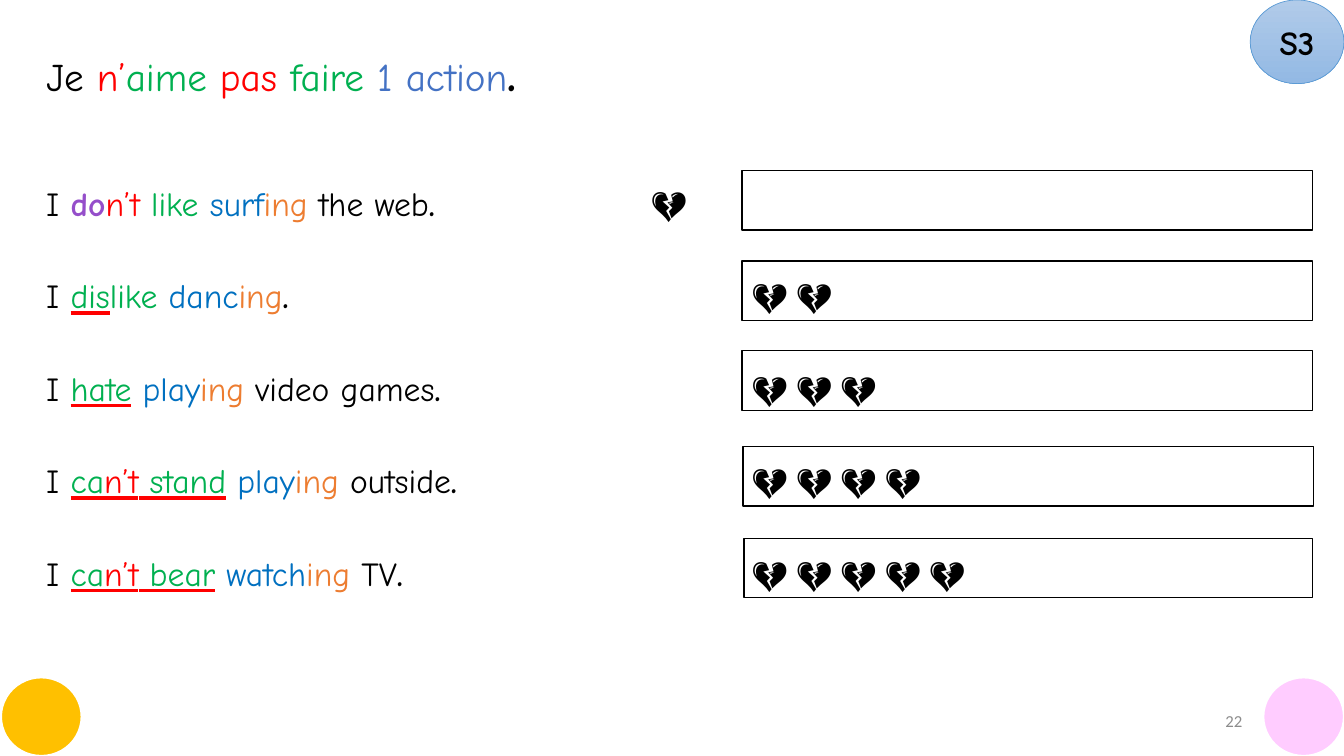
"""Build a slide on the ways to say in English that you do not like an action."""
from lxml.etree import SubElement
from pptx import Presentation
from pptx.dml.color import RGBColor
from pptx.enum.shapes import MSO_SHAPE as Shape
from pptx.enum.text import MSO_ANCHOR as Anchor, MSO_UNDERLINE as Underline, PP_ALIGN as Align
from pptx.oxml.ns import qn
from pptx.util import Inches, Pt

BLACK = RGBColor(0x00, 0x00, 0x00)
WHITE = RGBColor(0xFF, 0xFF, 0xFF)
RED = RGBColor(0xFF, 0x00, 0x00)
GREEN = RGBColor(0x00, 0xB0, 0x50)
BLUE = RGBColor(0x00, 0x70, 0xC0)
ORANGE = RGBColor(0xED, 0x7D, 0x31)
PURPLE = RGBColor(0x95, 0x4E, 0xCA)
INDIGO = RGBColor(0x44, 0x72, 0xC4)
GREY = RGBColor(0x8C, 0x8C, 0x8C)
GOLD = RGBColor(0xFF, 0xC0, 0x00)
PINK = RGBColor(0xFF, 0xCC, 0xFF)
BADGE_TOP = RGBColor(0xB1, 0xCB, 0xE9)
BADGE_BOTTOM = RGBColor(0x93, 0xB9, 0xE4)
BADGE_LINE = RGBColor(0x5B, 0x9B, 0xD5)

FONT = "Comic Neue"
HEART = "💔"
HEART_TABS = [6, 7, 7, 7, 7]

TITLE = [("Je ", BLACK), ("n’", RED), ("aime ", GREEN), ("pas ", RED),
         ("faire ", GREEN), ("1 action", INDIGO)]
SENTENCES = [
    [("I ", BLACK), ("do", PURPLE, "bold"), ("n’t ", RED), ("like ", GREEN),
     ("surf", BLUE), ("ing", ORANGE), (" the web", BLACK)],
    [("I ", BLACK), ("dis", GREEN, "underline"), ("like ", GREEN),
     ("danc", BLUE), ("ing", ORANGE)],
    [("I ", BLACK), ("hate", GREEN, "underline"), (" play", BLUE),
     ("ing ", ORANGE), ("video games", BLACK)],
    [("I ", BLACK), ("ca", GREEN, "underline"), ("n’t", RED, "underline"),
     (" stand", GREEN, "underline"), (" play", BLUE), ("ing ", ORANGE),
     ("outside", BLACK)],
    [("I ", BLACK), ("ca", GREEN, "underline"), ("n’t", RED, "underline"),
     (" bear", GREEN, "underline"), (" watch", BLUE), ("ing", ORANGE),
     (" TV", BLACK)],
]
ANSWER_BOXES = [(7.36, 1.69, 5.66), (7.36, 2.59, 5.66), (7.36, 3.48, 5.66),
                (7.37, 4.43, 5.66), (7.38, 5.34, 5.64)]


def add_span(para, text, color, style="", size=24, font=FONT):
    """Add one formatted run, with a thick red underline if asked."""
    span = para.add_run()
    span.text = text
    span.font.size = Pt(size)
    span.font.bold = style == "bold"
    span.font.color.rgb = color
    if style == "underline":
        span.font.underline = Underline.HEAVY_LINE
        line_fill = SubElement(span.font._element, qn("a:uFill"))
        solid = SubElement(line_fill, qn("a:solidFill"))
        SubElement(solid, qn("a:srgbClr"), val=str(RED))
    span.font.name = font


def add_title(page):
    """Place and write the French model sentence."""
    title = page.shapes.title
    title.left, title.top = Inches(0.36), Inches(0.48)
    title.width, title.height = Inches(5.48), Inches(0.94)
    frame = title.text_frame
    frame.vertical_anchor = Anchor.TOP
    frame.margin_top = 0
    para = frame.paragraphs[0]
    para.alignment = Align.LEFT
    para.line_spacing = 0.9
    for text, color in TITLE:
        add_span(para, text, color, size=28)
    add_span(para, ".", BLACK, "bold", 36)


def add_sentences(page):
    """Write the English sentences, each followed by its broken hearts."""
    box = page.shapes.add_textbox(Inches(0.36), Inches(1.83), Inches(12.67), Inches(5.37))
    frame = box.text_frame
    frame.word_wrap = True
    for count, (sentence, tab) in enumerate(zip(SENTENCES, HEART_TABS), 1):
        para = frame.paragraphs[0] if count == 1 else frame.add_paragraph()
        para.line_spacing = Pt(24)
        para.space_after = Pt(42.1)
        tabs = SubElement(para._p.get_or_add_pPr(), qn("a:tabLst"))
        SubElement(tabs, qn("a:tab"), pos=str(Inches(tab)), algn="l")
        for part in sentence:
            add_span(para, *part)
        add_span(para, ".\t", BLACK, "bold")
        add_span(para, " ".join([HEART] * count), BLACK, font="Lato")


def add_outlined(page, kind, left, top, width, height, line, weight, fill=None):
    """Add a preset shape with an outline and an optional plain fill."""
    shape = page.shapes.add_shape(kind, Inches(left), Inches(top), Inches(width), Inches(height))
    shape.shadow.inherit = False
    shape.line.color.rgb = line
    shape.line.width = Pt(weight)
    if fill is None:
        shape.fill.background()
    else:
        shape.fill.solid()
        shape.fill.fore_color.rgb = fill
    return shape


def add_badge(page):
    """Add the gradient badge in the top right corner."""
    badge = add_outlined(page, Shape.OVAL, 12.4, 0, 0.93, 0.83, BADGE_LINE, 0.5)
    badge.fill.gradient()
    badge.fill.gradient_angle = 270
    for stop, color in zip(badge.fill.gradient_stops, (BADGE_TOP, BADGE_BOTTOM)):
        stop.color.rgb = color
    frame = badge.text_frame
    frame.vertical_anchor = Anchor.MIDDLE
    frame.paragraphs[0].alignment = Align.CENTER
    add_span(frame.paragraphs[0], "S3", BLACK, "bold")


def add_page_number(page):
    """Add the page number at the bottom right."""
    box = page.shapes.add_textbox(Inches(9.42), Inches(6.95), Inches(3), Inches(0.4))
    frame = box.text_frame
    frame.word_wrap = True
    frame.vertical_anchor = Anchor.MIDDLE
    frame.paragraphs[0].alignment = Align.RIGHT
    add_span(frame.paragraphs[0], "22", GREY, size=12, font="Calibri")


def main():
    """Assemble and save the slide."""
    deck = Presentation()
    deck.slide_width, deck.slide_height = Inches(13.33), Inches(7.5)
    page = deck.slides.add_slide(deck.slide_layouts[5])
    add_title(page)
    add_sentences(page)
    for left, top, width in ANSWER_BOXES:
        add_outlined(page, Shape.RECTANGLE, left, top, width, 0.59, BLACK, 1)
    for left, fill in ((0.01, GOLD), (12.53, PINK)):
        add_outlined(page, Shape.OVAL, left, 6.72, 0.8, 0.78, WHITE, 1.5, fill)
    add_badge(page)
    add_page_number(page)
    deck.save("out.pptx")


if __name__ == "__main__":
    main()
